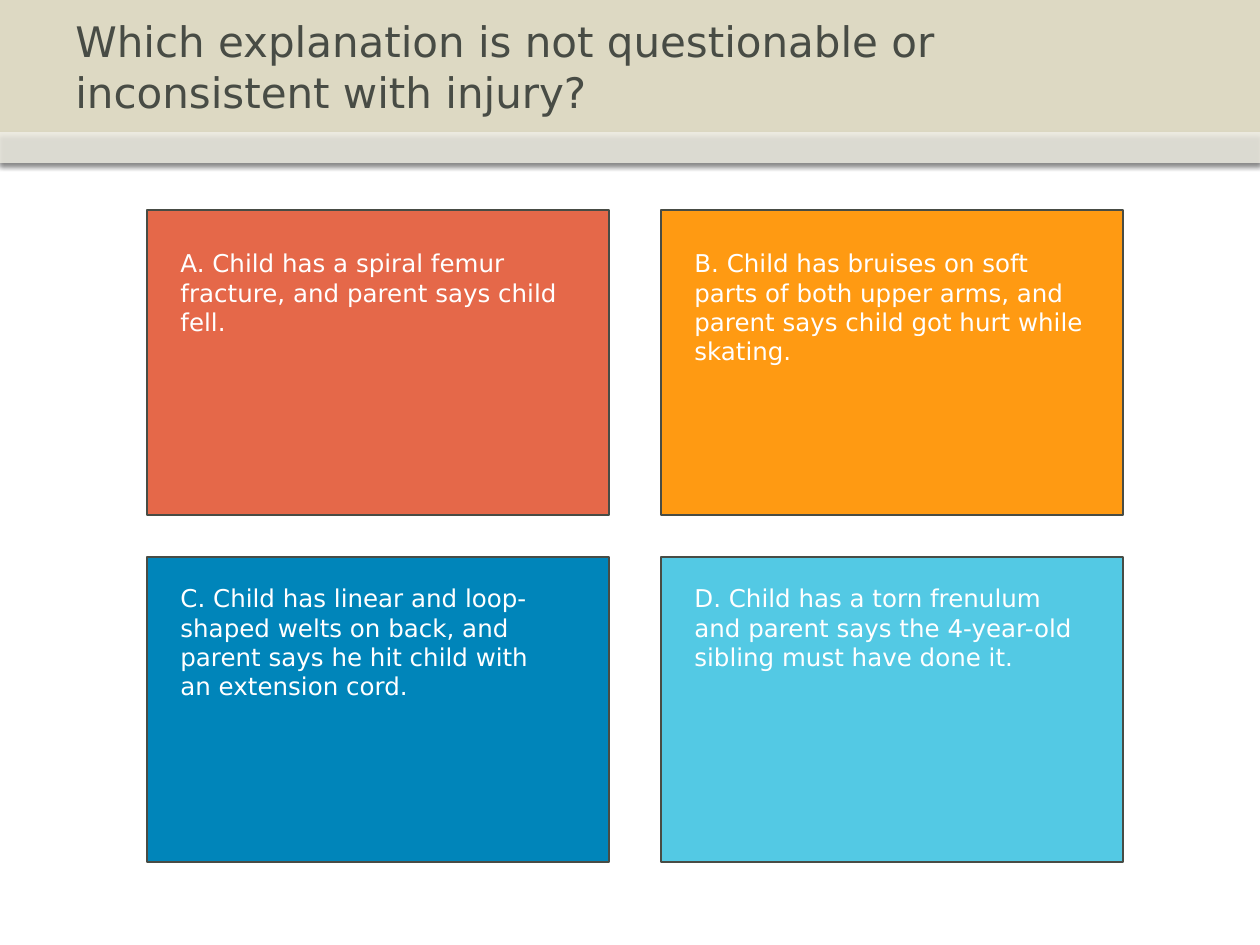
from lxml import etree
from pptx import Presentation
from pptx.dml.color import RGBColor
from pptx.enum.shapes import MSO_SHAPE
from pptx.enum.text import MSO_ANCHOR, MSO_AUTO_SIZE
from pptx.oxml.ns import qn
from pptx.util import Emu, Pt

RECT = MSO_SHAPE.RECTANGLE
TOP, MIDDLE = MSO_ANCHOR.TOP, MSO_ANCHOR.MIDDLE
GROW, FIXED = MSO_AUTO_SIZE.SHAPE_TO_FIT_TEXT, MSO_AUTO_SIZE.NONE
SCALE = 914400 / 126
WIDTH, HEIGHT = 1260, 945


def px(count):
    return Emu(round(count * SCALE))


def color(code):
    return RGBColor.from_string(code)


def fade(node, percent):
    """Set the opacity of a colour element."""
    etree.SubElement(node, qn("a:alpha")).set("val", str(percent * 1000))


class Deck:
    """Holds the style and the current slide."""

    font = "DejaVu Sans"
    dark = "484C45"
    light = "FFFFFF"

    def __init__(self):
        self.file = Presentation()
        self.file.slide_width, self.file.slide_height = px(WIDTH), px(HEIGHT)
        self.slide = self.file.slides.add_slide(self.file.slide_layouts[6])

    def rect(self, x, y, w, h, fill):
        shape = self.slide.shapes.add_shape(RECT, px(x), px(y), px(w), px(h))
        shape.shadow.inherit = False
        shape.fill.solid()
        shape.fill.fore_color.rgb = color(fill)
        return shape

    def card(self, x, y, w, h, fill):
        shape = self.rect(x, y, w, h, fill)
        shape.line.color.rgb = color(self.dark)
        shape.line.width = Pt(0.75)

    def band(self, y, h, fill, alpha=100):
        """Draw a full-width strip with a soft shadow below it."""
        shape = self.rect(0, y, WIDTH, h, fill)
        shape.line.fill.background()
        props = shape._element.spPr
        if alpha < 100:
            fade(props.find(qn("a:solidFill"))[0], alpha)
        shadow = etree.SubElement(props.find(qn("a:effectLst")), qn("a:outerShdw"))
        for name, value in (("blurRad", Pt(3.1)), ("dist", Pt(1.8)),
                            ("dir", 90 * 60000), ("rotWithShape", 0)):
            shadow.set(name, str(int(value)))
        tint = etree.SubElement(shadow, qn("a:srgbClr"))
        tint.set("val", "000000")
        fade(tint, 35)

    def text(self, words, x, y, w, h, size=14, ink=light, anchor=TOP, fit=GROW):
        box = self.slide.shapes.add_textbox(px(x), px(y), px(w), px(h))
        frame = box.text_frame
        frame.word_wrap = True
        frame.auto_size = fit
        frame.vertical_anchor = anchor
        run = frame.paragraphs[0].add_run()
        run.text = words
        run.font.name = self.font
        run.font.size = Pt(size)
        run.font.color.rgb = color(ink)


CARDS = [
    ("E56849", "A. Child has a spiral femur fracture, and parent says child fell.", 102),
    ("FF9A12", "B. Child has bruises on soft parts of both upper arms, and parent "
               "says child got hurt while skating.", 131),
    ("0085BA", "C. Child has linear and loop-shaped welts on back, and parent says "
               "he hit child with an extension cord.", 131),
    ("53C9E4", "D. Child has a torn frenulum and parent says the 4-year-old sibling "
               "must have done it.", 102),
]
COLS = [(147, 410), (661, 420)]  # card left, text width
ROWS = [(210, 242), (557, 577)]  # card top, text top
INSET = 21


def main():
    deck = Deck()
    deck.band(0, 163, "DDD9C3")
    deck.band(132, 31, "FFFFFF", alpha=53)
    deck.text("Which explanation is not questionable or inconsistent with injury?",
              63, 0, 1134, 132, size=24, ink=deck.dark, anchor=MIDDLE, fit=FIXED)
    for index, (fill, words, tall) in enumerate(CARDS):
        row, col = divmod(index, len(COLS))
        left, wide = COLS[col]
        top, start = ROWS[row]
        deck.card(left, top, 462, 305, fill)
        deck.text(words, left + INSET, start, wide, tall)
    deck.file.save("out.pptx")


if __name__ == "__main__":
    main()
